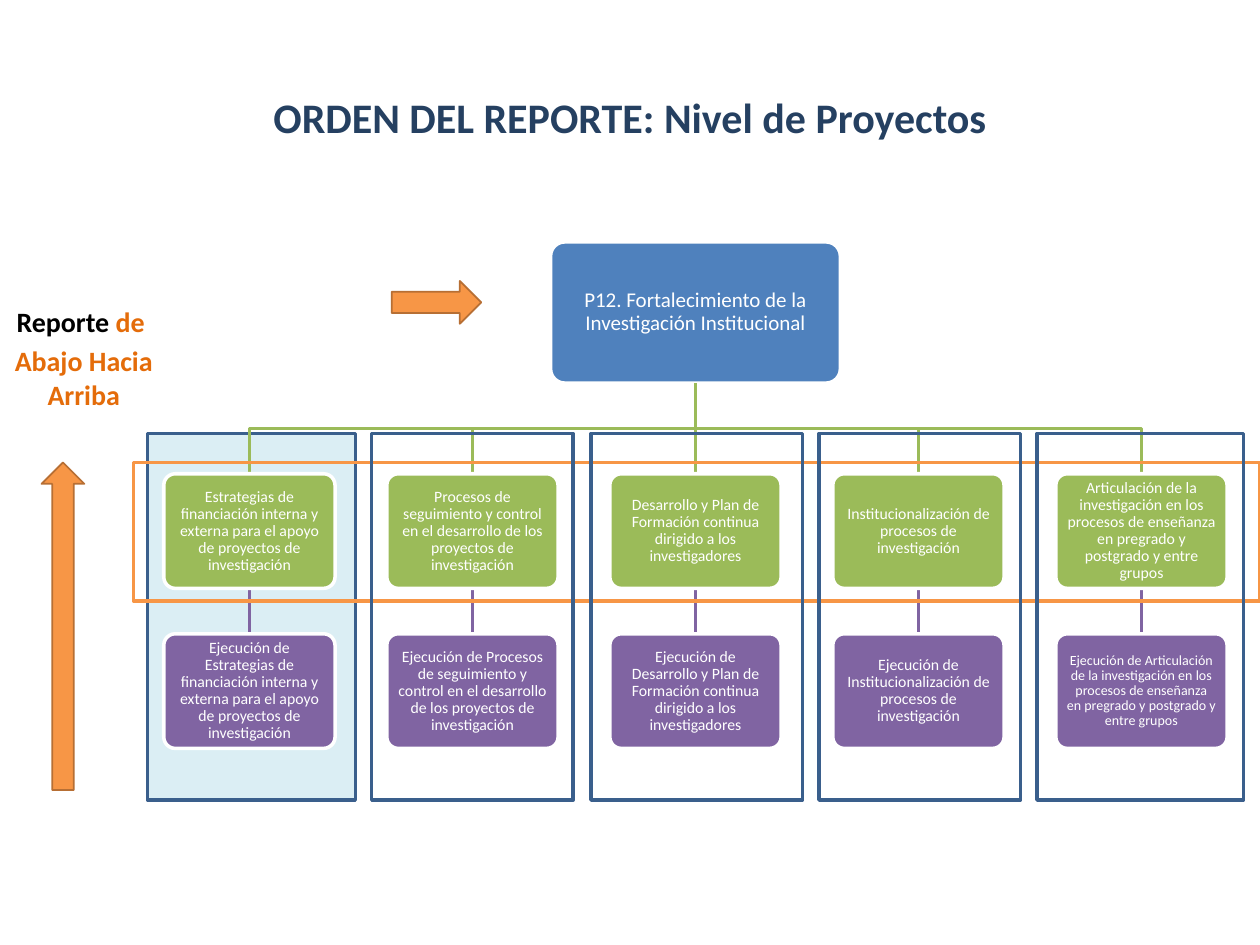
from pptx import Presentation
from pptx.dml.color import RGBColor
from pptx.enum.shapes import MSO_CONNECTOR, MSO_SHAPE
from pptx.enum.text import MSO_ANCHOR, PP_ALIGN
from pptx.oxml.ns import qn
from pptx.util import Inches, Pt
from lxml import etree

RECTANGLE = MSO_SHAPE.RECTANGLE
ROUNDED = MSO_SHAPE.ROUNDED_RECTANGLE
RIGHT_ARROW = MSO_SHAPE.RIGHT_ARROW
STRAIGHT = MSO_CONNECTOR.STRAIGHT
MIDDLE = MSO_ANCHOR.MIDDLE
CENTER = PP_ALIGN.CENTER

FONT = "Calibri"
WHITE, BLUE, GREEN, PURPLE = "FFFFFF", "4F81BD", "9BBB59", "8064A2"
ORANGE, ORANGE_EDGE, ORANGE_TEXT = "F79646", "B76F34", "E46C0A"
FRAME_BLUE, PALE_BLUE, NAVY = "3A5F8C", "DBEEF4", "254061"

# Grid of the chart, in inches
ROOT_X, COLUMN_STEP = 5.52, 1.77
ROOT_TOP, ROOT_WIDTH, ROOT_HEIGHT = 1.92, 2.3, 1.12
CARD_WIDTH, CARD_HEIGHT = 1.36, 0.91
PROJECT_TOP, EXECUTION_TOP = 3.76, 5.03
ROOT_BOTTOM, BUS_Y = ROOT_TOP + ROOT_HEIGHT, 3.4
FRAME_TOP, FRAME_HEIGHT = 3.44, 2.91

presentation = Presentation()
presentation.slide_width, presentation.slide_height = Inches(10), Inches(7.5)
slide = presentation.slides.add_slide(presentation.slide_layouts[6])


def add_box(kind, box, fill, line, width=2):
    shape = slide.shapes.add_shape(kind, *map(Inches, box))
    shape.shadow.inherit = False
    if fill:
        shape.fill.solid()
        shape.fill.fore_color.rgb = RGBColor.from_string(fill)
    else:
        shape.fill.background()
    shape.line.color.rgb = RGBColor.from_string(line)
    shape.line.width = Pt(width)
    return shape


def add_card(center, top, width, height, fill, text, size, margin):
    shape = add_box(ROUNDED, (center - width / 2, top, width, height), fill, WHITE)
    shape.adjustments[0] = 0.1
    frame = shape.text_frame
    frame.word_wrap = True
    frame.vertical_anchor = MIDDLE
    frame.margin_left = frame.margin_right = Inches(margin)
    frame.margin_top = frame.margin_bottom = Inches(margin)
    frame.text = text
    paragraph = frame.paragraphs[0]
    paragraph.alignment = CENTER
    paragraph.line_spacing = 0.9
    paragraph.font.name = FONT
    paragraph.font.size = Pt(size)
    paragraph.font.color.rgb = RGBColor.from_string(WHITE)


# Highlighted first column
add_box(RECTANGLE, (1.17, FRAME_TOP, 1.65, FRAME_HEIGHT), PALE_BLUE, FRAME_BLUE)

# Title
title = slide.shapes.add_textbox(Inches(0.5), Inches(0.3), Inches(9), Inches(1.25))
title.text_frame.word_wrap = True
title.text_frame.vertical_anchor = MIDDLE
title.text_frame.text = "ORDEN DEL REPORTE: Nivel de Proyectos"
paragraph = title.text_frame.paragraphs[0]
paragraph.alignment = CENTER
paragraph.font.name = FONT
paragraph.font.size = Pt(24)
paragraph.font.bold = True
paragraph.font.color.rgb = RGBColor.from_string(NAVY)

# Programme at the root
add_card(ROOT_X, ROOT_TOP, ROOT_WIDTH, ROOT_HEIGHT, BLUE,
         "P12. Fortalecimiento de la Investigación Institucional", 12, 0.08)

# Projects, each with its execution below
projects = [
    ("Estrategias de financiación interna y externa para el apoyo de proyectos de investigación", 9),
    ("Procesos de seguimiento y control en el desarrollo de los proyectos de investigación", 9),
    ("Desarrollo y Plan de Formación continua dirigido a los investigadores", 9),
    ("Institucionalización de procesos de investigación", 9),
    ("Articulación de la investigación en los procesos de enseñanza en pregrado y postgrado "
     "y entre grupos", 8),
]
for column, (project, execution_size) in enumerate(projects):
    center = ROOT_X + (column - 2) * COLUMN_STEP
    straight_lines = [(PROJECT_TOP + CARD_HEIGHT, EXECUTION_TOP, PURPLE)]
    if center == ROOT_X:
        straight_lines.append((ROOT_BOTTOM, PROJECT_TOP, GREEN))
    else:
        builder = slide.shapes.build_freeform(Inches(ROOT_X), Inches(ROOT_BOTTOM))
        corners = [(ROOT_X, BUS_Y), (center, BUS_Y), (center, PROJECT_TOP)]
        builder.add_line_segments([(Inches(x), Inches(y)) for x, y in corners], close=False)
        branch = builder.convert_to_shape()
        branch.shadow.inherit = False
        branch.fill.background()
        branch.line.color.rgb = RGBColor.from_string(GREEN)
        branch.line.width = Pt(2)
    for top, bottom, color in straight_lines:
        connector = slide.shapes.add_connector(
            STRAIGHT, Inches(center), Inches(top), Inches(center), Inches(bottom))
        connector.line.color.rgb = RGBColor.from_string(color)
        connector.line.width = Pt(2)
        etree.SubElement(connector._element.spPr, qn("a:effectLst"))
    add_card(center, PROJECT_TOP, CARD_WIDTH, CARD_HEIGHT, GREEN, project, 9, 0.06)
    add_card(center, EXECUTION_TOP, CARD_WIDTH, CARD_HEIGHT, PURPLE,
             "Ejecución de " + project, execution_size, 0.06)

# Arrow to the programme and band around the projects
add_box(RIGHT_ARROW, (3.11, 2.23, 0.71, 0.34), ORANGE, ORANGE_EDGE, 1)
add_box(RECTANGLE, (1.06, 3.67, 8.94, 1.1), None, ORANGE)

# Frames of the other columns
for left, width in [(2.95, 1.6), (4.69, 1.68), (6.5, 1.6), (8.23, 1.64)]:
    add_box(RECTANGLE, (left, FRAME_TOP, width, FRAME_HEIGHT), None, FRAME_BLUE)

# Upward arrow and its label
add_box(RIGHT_ARROW, (-0.8, 4.8, 2.6, 0.34), ORANGE, ORANGE_EDGE, 1).rotation = 270
label = slide.shapes.add_textbox(Inches(-0.07), Inches(2.37), Inches(1.47), Inches(1.06))
frame = label.text_frame
frame.word_wrap = True
frame.text = "Reporte \nAbajo Hacia Arriba"
frame.paragraphs[0].add_run().text = "de "
frame.paragraphs[1].space_before = Pt(3.2)
for paragraph in frame.paragraphs:
    paragraph.alignment = CENTER
    for run in paragraph.runs:
        run.font.name = FONT
        run.font.size = Pt(16)
        run.font.bold = True
        run.font.color.rgb = RGBColor.from_string(ORANGE_TEXT)
frame.paragraphs[0].runs[0].font.color.rgb = RGBColor.from_string("000000")

presentation.save("out.pptx")
